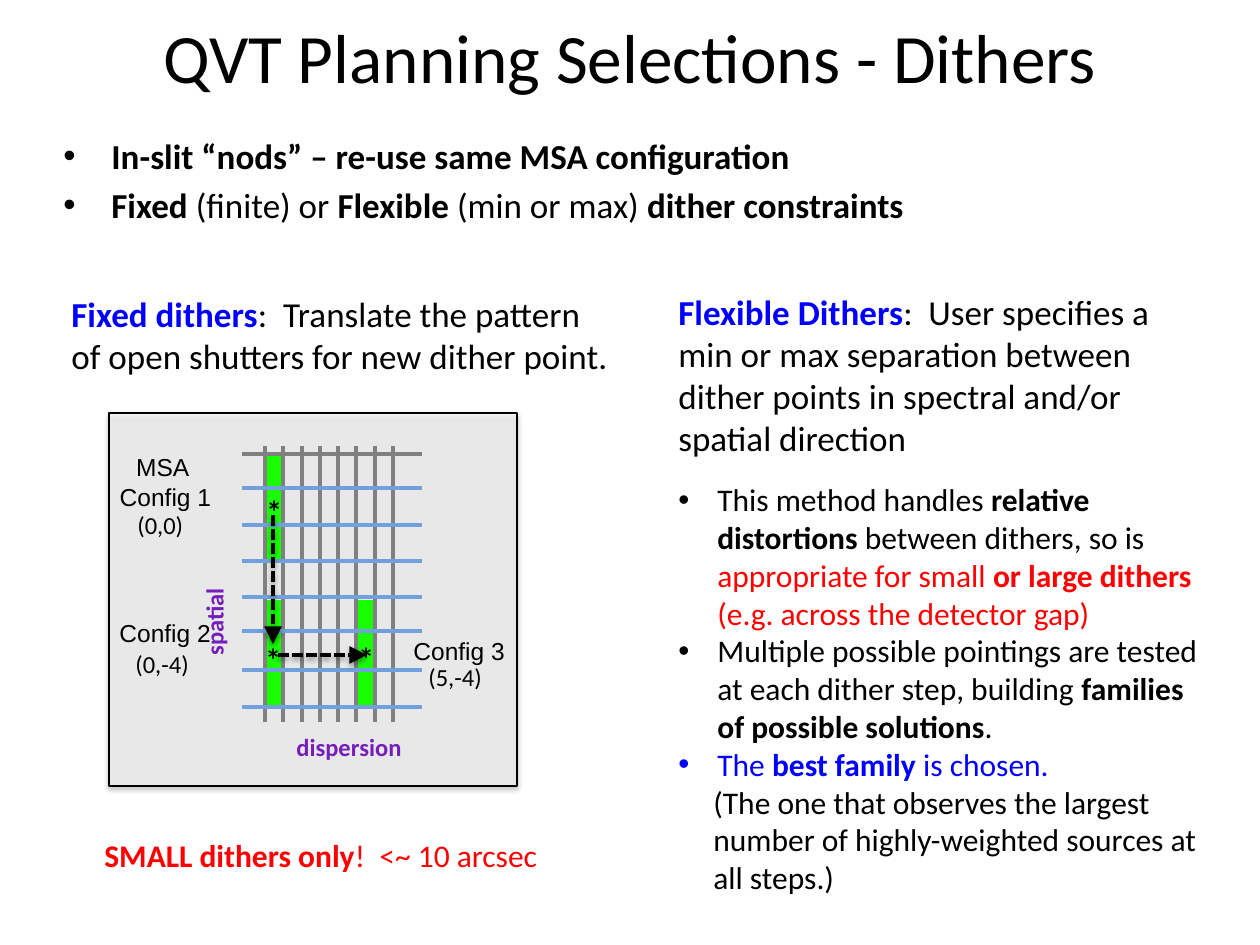
from lxml import etree
from pptx import Presentation
from pptx.dml.color import RGBColor
from pptx.enum.dml import MSO_LINE_DASH_STYLE as Dash
from pptx.enum.shapes import MSO_CONNECTOR, MSO_SHAPE
from pptx.enum.text import MSO_ANCHOR, PP_ALIGN
from pptx.oxml.ns import qn
from pptx.util import Pt

EMU_PER_PX = 914400 / 126
BLACK, WHITE, GREY = "000000", "FFFFFF", "808080"
BLUE, RED, GREEN = "0000FF", "FF0000", "18FF04"
PURPLE, ROW_BLUE = "761EBC", "71A1DC"


def px(length):
    return round(length * EMU_PER_PX)


def color(hex_string):
    return RGBColor.from_string(hex_string)


def set_effects(shape, shadow_alpha=None):
    """Give the shape a soft drop shadow, or no shadow without an alpha."""
    effects = etree.SubElement(shape._element.spPr, qn("a:effectLst"))
    if shadow_alpha:
        shadow = etree.SubElement(effects, qn("a:outerShdw"), blurRad=str(Pt(3.1)),
                                  dist=str(Pt(1.7)), dir="5400000", rotWithShape="0")
        shade = etree.SubElement(shadow, qn("a:srgbClr"), val=BLACK)
        etree.SubElement(shade, qn("a:alpha"), val=str(shadow_alpha * 1000))


def set_bullet(paragraph, indent):
    properties = paragraph._p.get_or_add_pPr()
    properties.set("marL", str(px(indent)))
    properties.set("indent", str(-px(indent)))
    etree.SubElement(properties, qn("a:buFont"), typeface="Arial")
    etree.SubElement(properties, qn("a:buChar"), char="•")


def add_text(slide, box, paragraphs, size, font="Calibri", align=PP_ALIGN.LEFT, wrap=True):
    """Place paragraphs, each a list of (text, colour, bold) runs."""
    shape = slide.shapes.add_textbox(*map(px, box))
    frame = shape.text_frame
    frame.word_wrap = wrap
    for index, runs in enumerate(paragraphs):
        paragraph = frame.add_paragraph() if index else frame.paragraphs[0]
        paragraph.alignment = align
        for text, hex_string, bold in runs:
            run = paragraph.add_run()
            run.text = text
            run.font.name, run.font.size, run.font.bold = font, Pt(size), bold
            run.font.color.rgb = color(hex_string)
    return shape


def add_rectangle(slide, box, fill, line):
    shape = slide.shapes.add_shape(MSO_SHAPE.RECTANGLE, *map(px, box))
    shape.fill.solid()
    shape.fill.fore_color.rgb = color(fill)
    shape.line.color.rgb = color(line)
    shape.line.width = Pt(0.75)
    return shape


def add_line(slide, start, end, hex_string):
    line = slide.shapes.add_connector(MSO_CONNECTOR.STRAIGHT, *map(px, start + end))
    line.line.color.rgb = color(hex_string)
    line.line.width = Pt(2)
    return line


def add_arrow(slide, start, end):
    arrow = add_line(slide, start, end, BLACK)
    arrow.line.dash_style = Dash.SQUARE_DOT
    etree.SubElement(arrow.line._get_or_add_ln(), qn("a:tailEnd"),
                     type="triangle", w="lg", len="lg")
    set_effects(arrow, 38)


def add_title(slide, box):
    runs = [("QVT Planning Selections - Dithers", BLACK, False)]
    title = add_text(slide, box, [runs], 39.6, align=PP_ALIGN.CENTER)
    title.text_frame.vertical_anchor = MSO_ANCHOR.MIDDLE


def add_summary(slide, box):
    summary = add_text(slide, box, [
        [("In-slit “nods” – re-use same MSA configuration", BLACK, True)],
        [("Fixed ", BLACK, True), ("(finite) or ", BLACK, False),
         ("Flexible", BLACK, True), (" (min or max) ", BLACK, False),
         ("dither constraints", BLACK, True)],
    ], 20)
    for paragraph in summary.text_frame.paragraphs:
        paragraph.space_before = Pt(4)
        set_bullet(paragraph, 48)


def add_heading(slide, box, term, explanation):
    add_text(slide, box, [[(term, BLUE, True), (explanation, BLACK, False)]], 20)


def add_shutter_diagram(slide, box):
    left, top, width, height = box

    def at(x, y):
        return left + x, top + y

    panel = add_rectangle(slide, box, WHITE, BLACK)
    fill_color = panel._element.spPr.find(qn("a:solidFill"))[0]
    etree.SubElement(fill_color, qn("a:alpha"), val="53000")
    set_effects(panel, 35)

    for corner in ((157, 188), (250, 188), (157, 41)):
        shutter = add_rectangle(slide, (*at(*corner), 15, 106), GREEN, GREEN)
        shutter.shadow.inherit = False
    for column in range(8):
        x = 156 + round(column * 128 / 7)
        set_effects(add_line(slide, at(x, 33), at(x, 309), GREY))
    for y in (41, 75, 112, 148, 184, 218, 257, 294):
        hex_string = GREY if y == 41 else ROW_BLUE
        set_effects(add_line(slide, at(133, y), at(313, y), hex_string))

    add_text(slide, (*at(-2, 33), 117, 72),
             [[("MSA ", BLACK, False)], [("Config 1", BLACK, False)]],
             14, "Arial", PP_ALIGN.CENTER, wrap=False)
    for text, x, y, label_width, font in (
        ("Config 2", -2, 199, 117, "Arial"),
        ("Config 3", 292, 217, 117, "Arial"),
        ("(0,0)", 16, 91, 88, "Calibri"),
        ("(0,-4)", 14, 230, 88, "Calibri"),
        ("(5,-4)", 307, 243, 79, "Calibri"),
    ):
        add_text(slide, (*at(x, y), label_width, 43), [[(text, BLACK, False)]],
                 14, font, wrap=False)
    for text, x, y, label_width, rotation in (
        ("dispersion", 175, 313, 132, 0),
        ("spatial", 59, 187, 93, 270),
    ):
        axis = add_text(slide, (*at(x, y), label_width, 43), [[(text, PURPLE, True)]],
                        14, wrap=False)
        axis.rotation = rotation

    add_arrow(slide, at(169, 242), at(258, 242))
    add_arrow(slide, at(164, 102), at(164, 231))
    for corner in ((144, 221), (237, 220), (145, 73)):
        add_text(slide, (*at(*corner), 34, 50), [[("*", BLACK, True)]], 18)


def add_flexible_notes(slide, box):
    bullets = [
        [("This method handles ", BLACK, False), ("relative distortions", BLACK, True),
         (" between dithers, so is ", BLACK, False),
         ("appropriate for small ", RED, False), ("or large dithers ", RED, True),
         ("(e.g. across the detector gap)", RED, False)],
        [("Multiple possible pointings are tested at each dither step, building ",
          BLACK, False),
         ("families of possible solutions", BLACK, True), (".", BLACK, False)],
        [("The ", BLUE, False), ("best family ", BLUE, True),
         ("is chosen.", BLUE, False)],
    ]
    remark = [[(text, BLACK, False)] for text in (
        "(The one that observes the largest",
        "number of highly-weighted sources at",
        "all steps.)",
    )]
    notes = add_text(slide, box, bullets + remark, 18)
    for index, paragraph in enumerate(notes.text_frame.paragraphs):
        if index < len(bullets):
            set_bullet(paragraph, 39)
        else:
            paragraph._p.get_or_add_pPr().set("marL", str(px(35)))


def main():
    presentation = Presentation()
    presentation.slide_width, presentation.slide_height = px(1260), px(945)
    slide = presentation.slides.add_slide(presentation.slide_layouts[6])
    add_shutter_diagram(slide, (109, 413, 408, 373))
    add_title(slide, (63, 5, 1134, 102))
    add_summary(slide, (51, 128, 1105, 129))
    add_heading(slide, (59, 286, 562, 97), "Fixed dithers",
                ":  Translate the pattern of open shutters for new dither point.")
    add_heading(slide, (666, 284, 553, 183), "Flexible Dithers",
                ":  User specifies a min or max separation between dither points "
                "in spectral and/or spatial direction")
    add_text(slide, (92, 830, 464, 50),
             [[("SMALL dithers only", RED, True), ("!  <~ 10 arcsec", RED, False)]],
             18, wrap=False)
    add_flexible_notes(slide, (666, 474, 553, 432))
    presentation.save("out.pptx")


if __name__ == "__main__":
    main()
